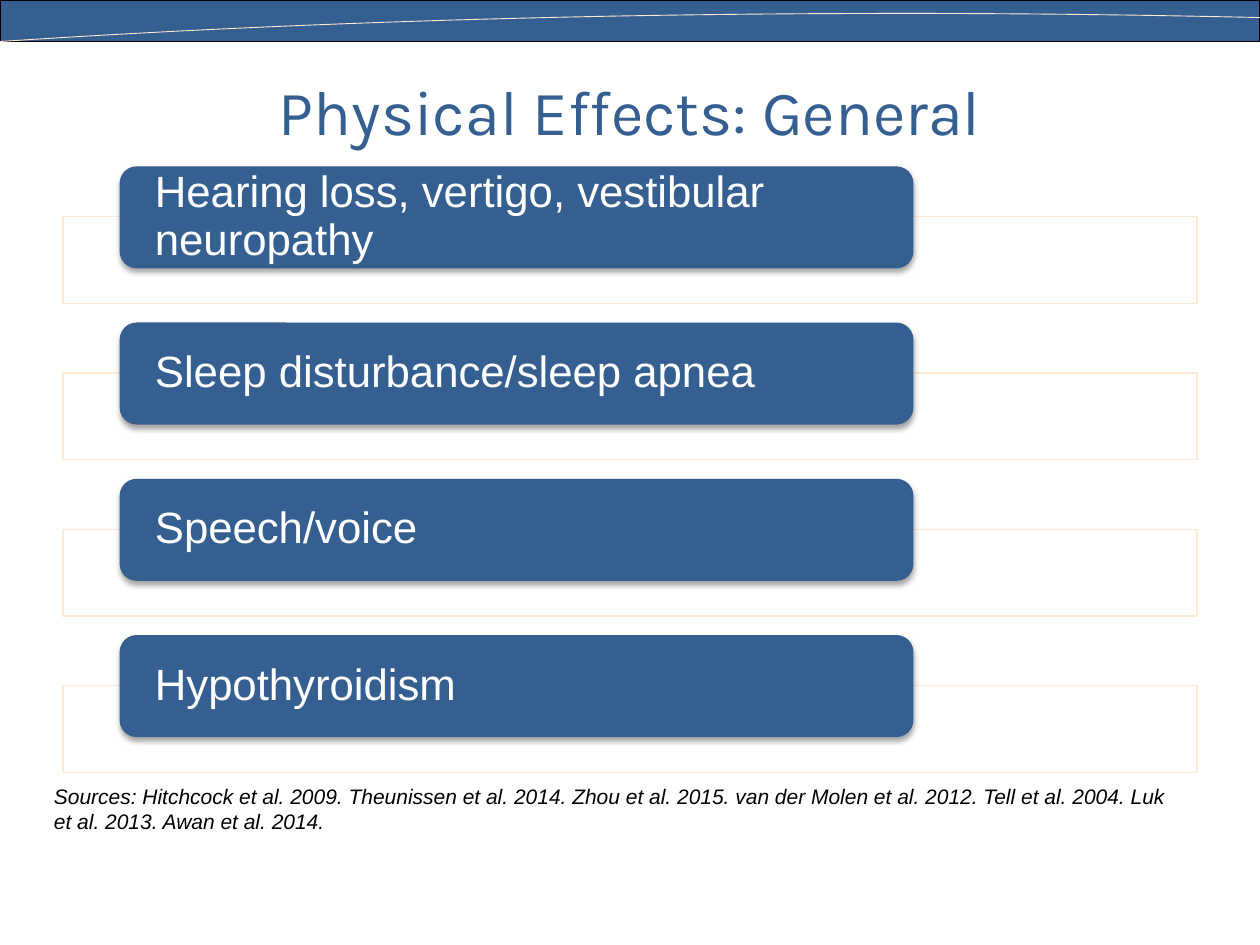
"""Build the slide on general physical effects as a list of four labelled bands."""
import lxml.etree
import pptx
import pptx.dml.color
import pptx.enum.shapes
import pptx.enum.text
import pptx.oxml.ns
import pptx.util

TITLE = "Physical Effects: General"
EFFECTS = [
    "Hearing loss, vertigo, vestibular neuropathy",
    "Sleep disturbance/sleep apnea",
    "Speech/voice",
    "Hypothyroidism",
]
SOURCES = (
    "Sources: Hitchcock et al. 2009. Theunissen et al. 2014. Zhou et al. 2015. "
    "van der Molen et al. 2012. Tell et al. 2004. Luk et al. 2013. Awan et al. 2014."
)

BLUE = pptx.dml.color.RGBColor(0x36, 0x5F, 0x91)
CREAM = pptx.dml.color.RGBColor(0xFF, 0xEA, 0xD5)
WHITE = pptx.dml.color.RGBColor(0xFF, 0xFF, 0xFF)
BLACK = pptx.dml.color.RGBColor(0, 0, 0)

WIDTH, HEIGHT = 10, 7.5
MARGIN = 0.05 * WIDTH
BAND_WIDTH = WIDTH - 2 * MARGIN
LABEL_LEFT = MARGIN + 0.05 * BAND_WIDTH
LABEL_WIDTH = 0.7 * BAND_WIDTH
LABEL_HEIGHT, BAND_HEIGHT = 0.81, 0.69
FIRST_ROW, ROW_STEP, BAND_DROP = 1.32, 1.24, 0.4
CURVE = [(10, 0.14), (7.44, 0.08), (3.79, 0.08), (0, 0.33)]
CURVE_STEPS = 40

SHAPES = pptx.enum.shapes.MSO_SHAPE
ANCHOR = pptx.enum.text.MSO_ANCHOR
ALIGN = pptx.enum.text.PP_ALIGN
inches = pptx.util.Inches
points = pptx.util.Pt
qualified = pptx.oxml.ns.qn


def place(*lengths):
    return [inches(length) for length in lengths]


def add_box(page, kind, at, fill, line=None, weight=0.75):
    box = page.shapes.add_shape(kind, *place(*at))
    box.shadow.inherit = False
    box.fill.solid()
    box.fill.fore_color.rgb = fill
    if line is None:
        box.line.fill.background()
    else:
        box.line.color.rgb = line
        box.line.width = points(weight)
    return box


def add_text(para, text, font, size, colour, italic=None):
    span = para.add_run()
    span.text = text
    span.font.name = font
    span.font.size = points(size)
    span.font.color.rgb = colour
    span.font.italic = italic


def add_alpha(colour, percent):
    lxml.etree.SubElement(colour, qualified("a:alpha"), val=str(percent * 1000))


def add_shadow(box):
    effects = box.element.spPr.find(qualified("a:effectLst"))
    shadow = lxml.etree.SubElement(
        effects, qualified("a:outerShdw"), blurRad=str(points(3.1)),
        dist=str(points(1.8)), dir="5400000", rotWithShape="0")
    add_alpha(lxml.etree.SubElement(shadow, qualified("a:srgbClr"), val=str(BLACK)), 35)


def curve_point(share):
    rest = 1 - share
    weights = (rest ** 3, 3 * rest ** 2 * share, 3 * rest * share ** 2, share ** 3)
    return tuple(inches(sum(weight * point[axis] for weight, point in zip(weights, CURVE)))
                 for axis in (0, 1))


def add_header(page):
    add_box(page, SHAPES.RECTANGLE, (0, 0, WIDTH, 0.33), BLUE, BLACK)
    dots = [curve_point(step / CURVE_STEPS) for step in range(CURVE_STEPS + 1)]
    builder = page.shapes.build_freeform(*dots[0])
    builder.add_line_segments(dots[1:], close=False)
    curve = builder.convert_to_shape()
    curve.shadow.inherit = False
    curve.fill.background()
    curve.line.color.rgb = CREAM
    curve.line.width = points(0.5)


def add_title(page):
    title = page.shapes.title
    title.left, title.top, title.width, title.height = place(MARGIN, 0.25, BAND_WIDTH, 1.25)
    title.text_frame.vertical_anchor = ANCHOR.MIDDLE
    para = title.text_frame.paragraphs[0]
    para.alignment = ALIGN.CENTER
    add_text(para, TITLE, "Karla", 36, BLUE)


def add_effect(page, row, effect):
    top = FIRST_ROW + row * ROW_STEP
    band = add_box(page, SHAPES.RECTANGLE,
                   (MARGIN, top + BAND_DROP, BAND_WIDTH, BAND_HEIGHT), WHITE, CREAM)
    fill = band.element.spPr.find(qualified("a:solidFill"))
    add_alpha(fill[0], 90)
    label = add_box(page, SHAPES.ROUNDED_RECTANGLE,
                    (LABEL_LEFT, top, LABEL_WIDTH, LABEL_HEIGHT), BLUE)
    add_shadow(label)
    frame = label.text_frame
    frame.word_wrap = True
    frame.vertical_anchor = ANCHOR.MIDDLE
    frame.margin_left = frame.margin_right = inches(0.24)
    frame.margin_top = frame.margin_bottom = 0
    para = frame.paragraphs[0]
    para.alignment = ALIGN.LEFT
    para.line_spacing = 0.9
    add_text(para, effect, "Arial", 25, WHITE)


def add_sources(page):
    box = page.shapes.add_textbox(*place(0.33, 6.17, 9.17, 0.5))
    box.text_frame.word_wrap = True
    add_text(box.text_frame.paragraphs[0], SOURCES, "Arial", 12, BLACK, italic=True)


def main():
    deck = pptx.Presentation()
    deck.slide_width, deck.slide_height = place(WIDTH, HEIGHT)
    page = deck.slides.add_slide(deck.slide_layouts[5])
    add_header(page)
    add_title(page)
    for row, effect in enumerate(EFFECTS):
        add_effect(page, row, effect)
    add_sources(page)
    deck.save("out.pptx")


if __name__ == "__main__":
    main()
